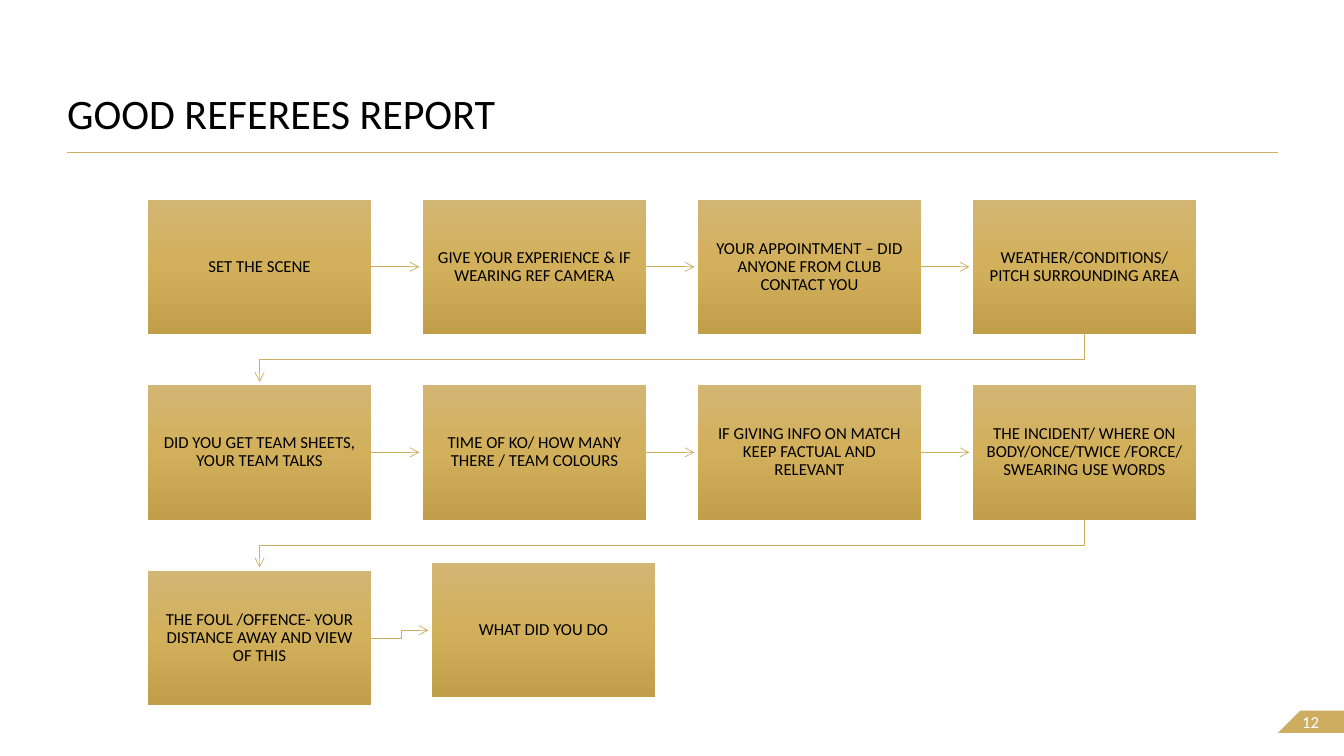
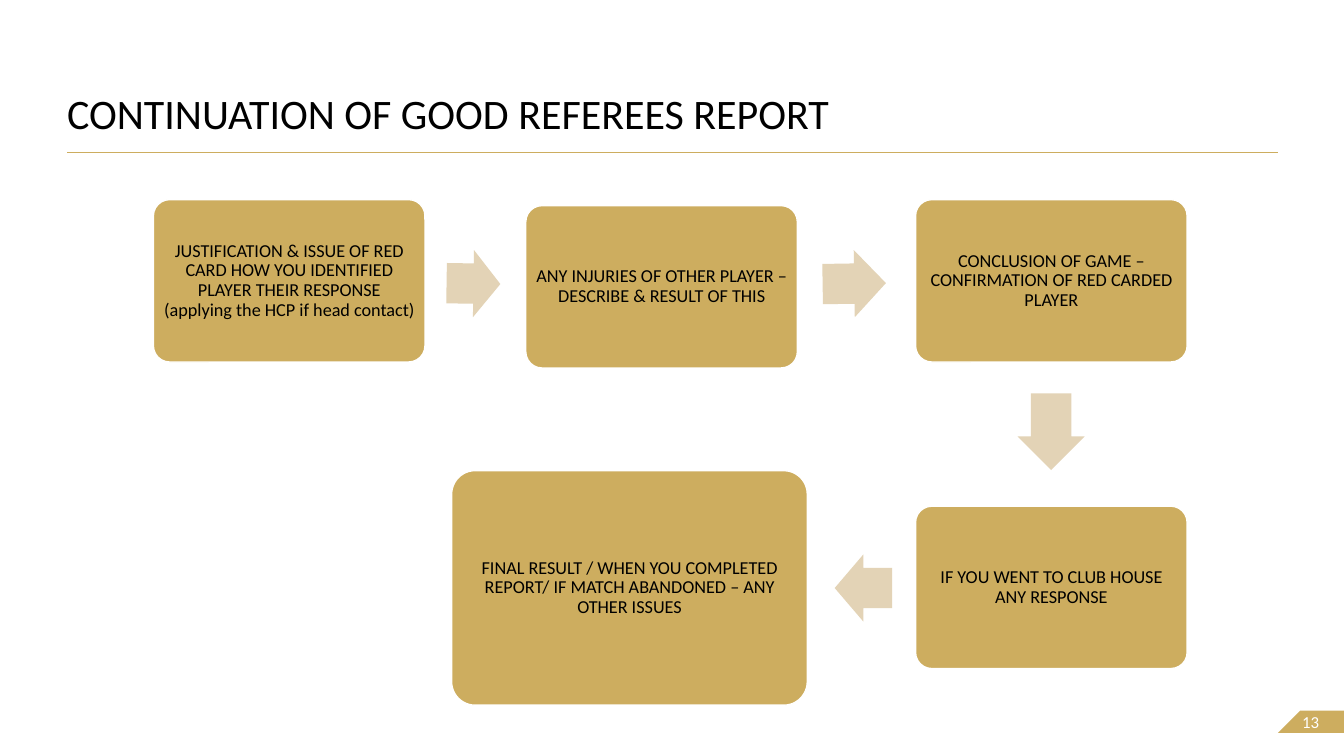
from copy import deepcopy

from pptx import Presentation
from pptx.dml.color import RGBColor
from pptx.enum.shapes import MSO_CONNECTOR as Connector, MSO_SHAPE as Shape
from pptx.enum.text import MSO_ANCHOR as Anchor, PP_ALIGN as Align
from pptx.oxml.ns import qn
from pptx.util import Pt

COLORS = {
    "gold": "CDAD5F",
    "light": "D3B674",
    "middle": "D2AF5A",
    "dark": "C19E49",
    "sand": "E3D3B6",
    "white": "FFFFFF",
    "black": "000000",
}
RIGHT_SIDE = 3


def rgb(name):
    return RGBColor.from_string(COLORS[name])


class Report:
    font = "Calibri"

    def __init__(self):
        self.deck = Presentation()
        self.deck.slide_width, self.deck.slide_height = Pt(960), Pt(540)
        self.page = None

    def add_page(self, title, number):
        self.page = self.deck.slides.add_slide(self.deck.slide_layouts[6])
        self.line((48, 108.8), (912.8, 108.8), 1)
        box = self.page.shapes.add_textbox(Pt(48), Pt(36), Pt(767), Pt(62.6))
        self.label(box, title, 30, spacing=0.8, anchor=Anchor.BOTTOM)
        tab = self.outline([(928.8, 507.6), (960, 507.6), (960, 523.6), (912.8, 523.6)], True)
        self.paint(tab, "gold")
        self.label(tab, number, 12, "white")
        tab.text_frame.margin_left = Pt(17.3)

    def label(self, box, text, size, color="black", align=Align.LEFT, spacing=1.0,
              inset=0, anchor=Anchor.MIDDLE):
        frame = box.text_frame
        frame.word_wrap = True
        frame.vertical_anchor = anchor
        frame.margin_left = frame.margin_right = Pt(inset)
        frame.margin_top = frame.margin_bottom = Pt(inset)
        frame.text = text
        para = frame.paragraphs[0]
        para.alignment = align
        para.line_spacing = spacing
        for span in para.runs:
            span.font.name = self.font
            span.font.size = Pt(size)
            span.font.color.rgb = rgb(color)

    def paint(self, shape, color):
        shape.fill.solid()
        shape.fill.fore_color.rgb = rgb(color)
        shape.line.fill.background()

    def shape(self, kind, left, top, width, height):
        shape = self.page.shapes.add_shape(kind, Pt(left), Pt(top), Pt(width), Pt(height))
        shape.shadow.inherit = False
        return shape

    def outline(self, points, close):
        corners = [(Pt(x), Pt(y)) for x, y in points]
        builder = self.page.shapes.build_freeform(*corners[0], scale=1.0)
        builder.add_line_segments(corners[1:], close=close)
        shape = builder.convert_to_shape()
        shape.shadow.inherit = False
        return shape

    def stroke(self, item, width, arrow=False):
        item.line.color.rgb = rgb("gold")
        item.line.width = Pt(width)
        if arrow:
            line = item._element.spPr.find(qn("a:ln"))
            line.append(line.makeelement(qn("a:tailEnd"), {"type": "arrow"}))

    def line(self, start, end, width, arrow=False):
        link = self.page.shapes.add_connector(
            Connector.STRAIGHT, *(Pt(value) for value in (*start, *end)))
        self.stroke(link, width, arrow)
        properties = link._element.spPr
        properties.append(properties.makeelement(qn("a:effectLst"), {}))
        return link

    def bent_arrow(self, points):
        route = self.outline(points, False)
        route.fill.background()
        self.stroke(route, 0.5, arrow=True)

    def step(self, text, left, top, width, height):
        box = self.shape(Shape.RECTANGLE, left, top, width, height)
        box.line.fill.background()
        box.fill.gradient()
        box.fill.gradient_angle = 270
        stops = box._element.spPr.find(qn("a:gradFill")).find(qn("a:gsLst"))
        stops.insert(1, deepcopy(stops[0]))
        shades = [(0, "light"), (0.5, "middle"), (1, "dark")]
        for stop, (position, color) in zip(box.fill.gradient_stops, shades):
            stop.position = position
            stop.color.rgb = rgb(color)
        self.label(box, text, 12, align=Align.CENTER, spacing=0.9, inset=8)
        return box

    def card(self, text, left, top, width=194, height=116):
        box = self.shape(Shape.ROUNDED_RECTANGLE, left, top, width, height)
        box.adjustments[0] = 0.1
        self.paint(box, "gold")
        box.line.color.rgb = rgb("white")
        box.line.width = Pt(1)
        self.label(box, text, 13, align=Align.CENTER, spacing=0.9, inset=3.6)

    def block_arrow(self, left, top, width, rotation):
        arrow = self.shape(Shape.RIGHT_ARROW, left, top, width, 48)
        arrow.adjustments[0], arrow.adjustments[1] = 0.6, 0.5
        arrow.rotation = rotation
        self.paint(arrow, "sand")


def add_steps(report):
    left, top, width, height = 105.6, 142.6, 159.7, 96
    column_pitch, row_pitch, tip_gap = 196.4, 132.5, 2.4
    rows = [
        ["SET THE SCENE",
         "GIVE YOUR EXPERIENCE & IF WEARING REF CAMERA",
         "YOUR APPOINTMENT – DID ANYONE FROM CLUB CONTACT YOU",
         "WEATHER/CONDITIONS/ PITCH SURROUNDING AREA"],
        ["DID YOU GET TEAM SHEETS, YOUR TEAM TALKS",
         "TIME OF KO/ HOW MANY THERE / TEAM COLOURS",
         "IF GIVING INFO ON MATCH KEEP FACTUAL AND RELEVANT",
         "THE INCIDENT/ WHERE ON BODY/ONCE/TWICE /FORCE/ SWEARING USE WORDS"],
    ]
    first_center = left + width / 2
    last_center = first_center + 3 * column_pitch
    for row, texts in enumerate(rows):
        y = top + row * row_pitch
        middle, bottom, next_top = y + height / 2, y + height, y + row_pitch
        for column, text in enumerate(texts):
            x = left + column * column_pitch
            box = report.step(text, x, y, width, height)
            if column < len(texts) - 1:
                link = report.line((x + width, middle),
                                   (x + column_pitch - tip_gap, middle), 0.5, arrow=True)
                link.begin_connect(box, RIGHT_SIDE)
        turn = (bottom + next_top) / 2
        report.bent_arrow([(last_center, bottom), (last_center, turn),
                           (first_center, turn), (first_center, next_top - tip_gap)])

    foul_top, action_left, action_top = top + 2 * row_pitch, 308.4, 402.2
    report.step("THE FOUL /OFFENCE- YOUR DISTANCE AWAY AND VIEW OF THIS",
                left, foul_top, width, height)
    report.step("WHAT DID YOU DO", action_left, action_top, width, height)
    foul_middle, action_middle = foul_top + height / 2, action_top + height / 2
    report.bent_arrow([(left + width, foul_middle), (286.8, foul_middle),
                       (286.8, action_middle), (action_left - tip_gap, action_middle)])


def add_cards(report):
    report.card("JUSTIFICATION & ISSUE OF RED CARD HOW YOU IDENTIFIED PLAYER THEIR RESPONSE "
                "(applying the HCP if head contact)", 109.6, 142.6)
    report.card("ANY INJURIES OF OTHER PLAYER – DESCRIBE & RESULT OF THIS", 375.6, 146.9)
    report.card("CONCLUSION OF GAME – CONFIRMATION OF RED CARDED PLAYER", 654, 142.6)
    report.card("IF YOU WENT TO CLUB HOUSE ANY RESPONSE", 654, 361.6)
    report.card("FINAL RESULT / WHEN YOU COMPLETED REPORT/ IF MATCH ABANDONED – ANY OTHER ISSUES",
                322.6, 336.2, 254, 167.5)
    for arrow in [(319, 178.6, 38.4, 0.9), (587.6, 178.6, 45.2, 359.1),
                  (723.4, 284.4, 54.8, 90), (596.2, 396, 41, 180)]:
        report.block_arrow(*arrow)


def main():
    report = Report()
    report.add_page("GOOD REFEREES REPORT", "12")
    add_steps(report)
    report.add_page("CONTINUATION OF GOOD REFEREES REPORT", "13")
    add_cards(report)
    report.deck.save("out.pptx")


if __name__ == "__main__":
    main()
